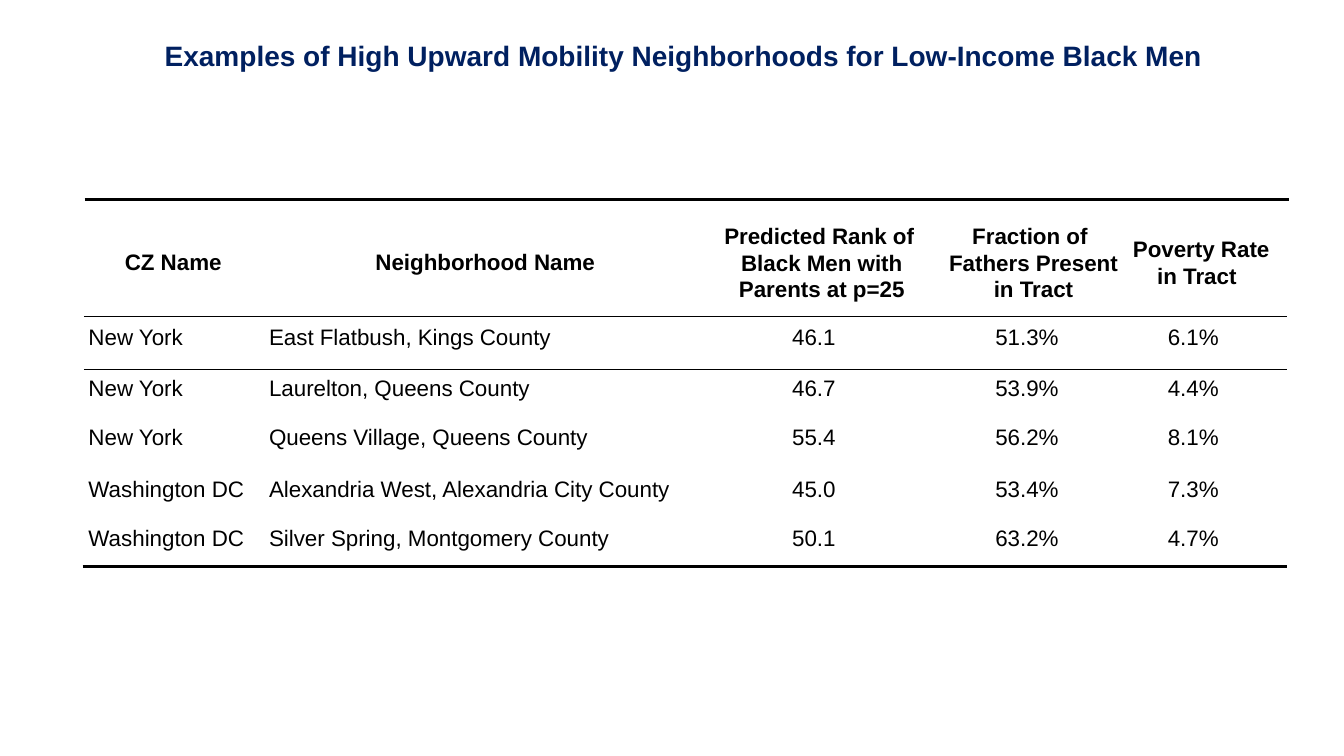
import lxml.etree
import pptx
import pptx.dml.color
import pptx.enum.shapes
import pptx.enum.text
import pptx.oxml.ns
import pptx.util

Cm = pptx.util.Cm
Pt = pptx.util.Pt
qn = pptx.oxml.ns.qn
ALIGN = pptx.enum.text.PP_ALIGN
MIDDLE = pptx.enum.text.MSO_ANCHOR.MIDDLE


def color(code):
    return pptx.dml.color.RGBColor.from_string(code)


def assign(target, values):
    for key, value in values.items():
        setattr(target, key, value)


class MobilitySlide:
    """Holds the style and the current slide, and draws its elements."""

    font = "Arial"
    navy = "002060"
    black = "000000"

    def __init__(self, deck):
        self.slide = deck.slides.add_slide(deck.slide_layouts[6])

    def wording(self, paragraph, text, size, bold, code, layout):
        indents = {key: layout[key] for key in ("marL", "marR", "indent") if key in layout}
        for key, value in indents.items():
            paragraph._p.get_or_add_pPr().set(key, str(int(Cm(value))))
        assign(paragraph, {key: value for key, value in layout.items() if key not in indents})
        run = paragraph.add_run()
        run.text = text
        assign(run.font, {"name": self.font, "size": Pt(size), "bold": bold})
        run.font.color.rgb = color(code)

    def title(self, text, left, top, width, height):
        frame = self.slide.shapes.add_textbox(Cm(left), Cm(top), Cm(width), Cm(height)).text_frame
        assign(frame, {"word_wrap": True, "vertical_anchor": MIDDLE})
        self.wording(frame.paragraphs[0], text, 20, True, self.navy, {"alignment": ALIGN.CENTER})

    def rule(self, left, right, y):
        line = self.slide.shapes.add_connector(
            pptx.enum.shapes.MSO_CONNECTOR.STRAIGHT, Cm(left), Cm(y), Cm(right), Cm(y))
        line.line.color.rgb = color(self.black)
        line.line.width = Pt(2.25)
        lxml.etree.SubElement(line._element.spPr, qn("a:effectLst"))

    def border(self, cell, side):
        edge = lxml.etree.SubElement(cell._tc.get_or_add_tcPr(), qn("a:" + side), w=str(Pt(0.75)))
        fill = lxml.etree.SubElement(edge, qn("a:solidFill"))
        lxml.etree.SubElement(fill, qn("a:srgbClr"), val=self.black)

    def cell(self, cell, text, bold, layout, inset, sides):
        assign(cell, {"margin_left": 0, "margin_right": 0, "margin_bottom": 0,
                      "margin_top": Cm(inset), "vertical_anchor": MIDDLE})
        for side in sides:
            self.border(cell, side)
        cell.fill.background()
        self.wording(cell.text_frame.paragraphs[0], text, 16, bold, self.black, layout)

    def table(self, left, top, widths, heights):
        table = self.slide.shapes.add_table(
            len(heights), len(widths), Cm(left), Cm(top), Cm(sum(widths)), Cm(sum(heights))).table
        assign(table, {"first_row": False, "horz_banding": False})
        for column, width in zip(table.columns, widths):
            column.width = Cm(width)
        for row, height in zip(table.rows, heights):
            row.height = Cm(height)
        return table


HEADINGS = [
    ("CZ Name", {"alignment": ALIGN.CENTER, "marL": 0.1}),
    ("Neighborhood Name", {"alignment": ALIGN.CENTER, "marL": 0.28}),
    ("Predicted Rank of Black Men with Parents at p=25",
     {"alignment": ALIGN.CENTER, "marL": 0.5, "marR": 0.1, "indent": -0.13, "line_spacing": 1.08}),
    ("Fraction of Fathers Present in Tract",
     {"alignment": ALIGN.CENTER, "marL": 0.38, "marR": 0.05, "indent": -0.18, "line_spacing": 1.08}),
    ("Poverty Rate in Tract",
     {"alignment": ALIGN.LEFT, "marL": 0.74, "indent": -0.61, "line_spacing": 1.08}),
]
BODY_LAYOUTS = [
    {"alignment": ALIGN.LEFT, "marL": 0.1},
    {"alignment": ALIGN.LEFT, "marL": 0.28},
    {"alignment": ALIGN.CENTER},
    {"alignment": ALIGN.CENTER},
    {"alignment": ALIGN.CENTER, "marR": 0.71},
]
NEIGHBORHOODS = [
    ("New York", "East Flatbush, Kings County", "46.1", "51.3%", "6.1%"),
    ("New York", "Laurelton, Queens County", "46.7", "53.9%", "4.4%"),
    ("New York", "Queens Village, Queens County", "55.4", "56.2%", "8.1%"),
    ("Washington DC", "Alexandria West, Alexandria City County", "45.0", "53.4%", "7.3%"),
    ("Washington DC", "Silver Spring, Montgomery County", "50.1", "63.2%", "4.7%"),
]
LINE_PITCHES = [10, 9.3, 9.3, 9.3, 8.7]
BORDERED = {1: ("lnT", "lnB"), 2: ("lnT",)}


def main():
    deck = pptx.Presentation()
    assign(deck, {"slide_width": Cm(33.87), "slide_height": Cm(19.05)})
    page = MobilitySlide(deck)
    page.title("Examples of High Upward Mobility Neighborhoods for Low-Income Black Men",
               3.78, 0.25, 26.9, 2.31)
    tracts = page.table(2.13, 5, [4.37, 11.18, 5.66, 5.08, 4.01],
                        [2.97, 1.35, 1.24, 1.24, 1.37, 1.12])
    for column, (heading, layout) in enumerate(HEADINGS):
        page.cell(tracts.cell(0, column), heading, True, layout, 0.25, ("lnT", "lnB"))
    for row, (neighborhood, pitch) in enumerate(zip(NEIGHBORHOODS, LINE_PITCHES), 1):
        for column, (value, layout) in enumerate(zip(neighborhood, BODY_LAYOUTS)):
            page.cell(tracts.cell(row, column), value, False,
                      {**layout, "line_spacing": Pt(pitch)}, 0, BORDERED.get(row, ()))
    page.rule(2.08, 32.44, 14.27)
    page.rule(2.13, 32.49, 5.03)
    deck.save("out.pptx")


if __name__ == "__main__":
    main()
